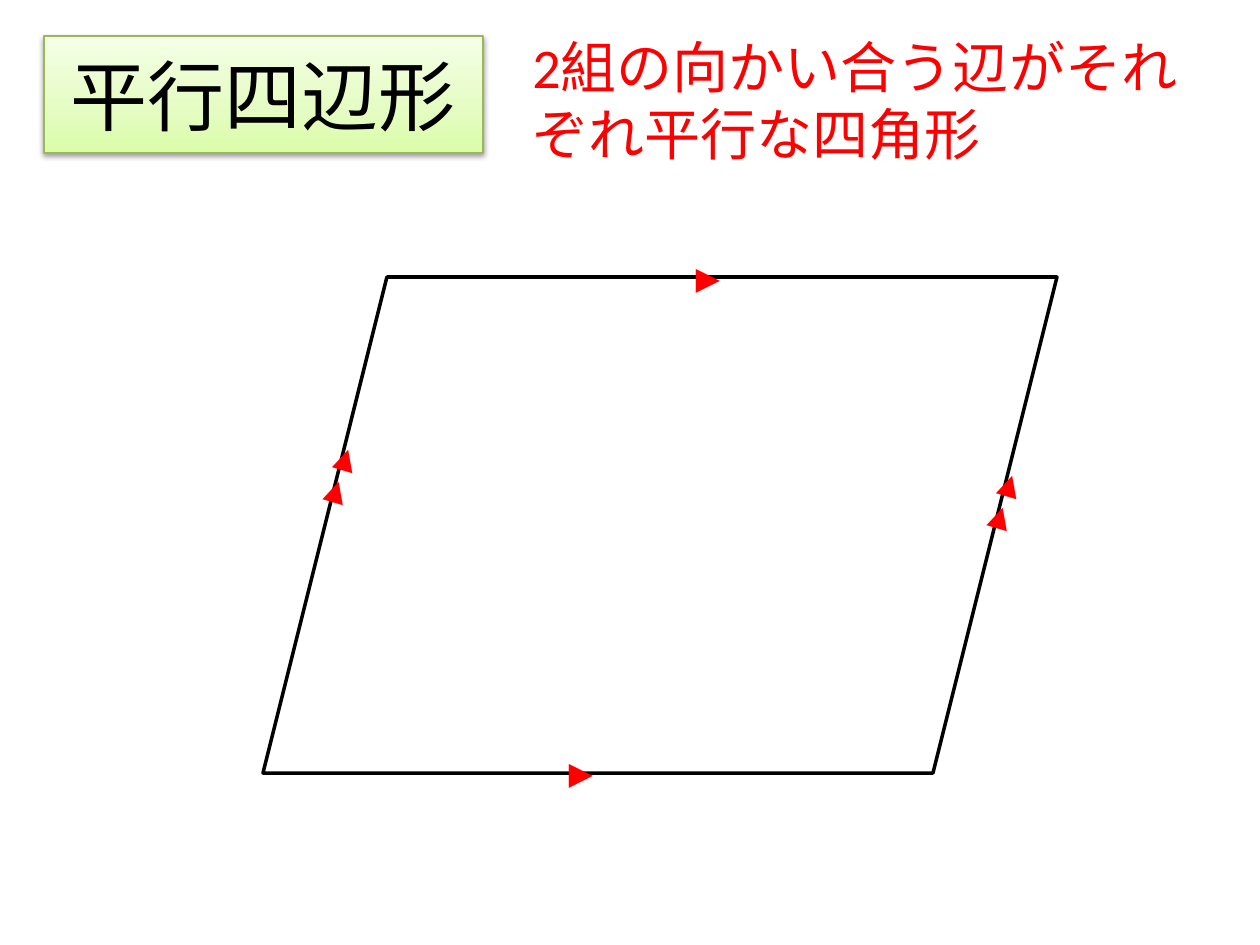
"""Builds a slide that defines the parallelogram and marks its parallel sides."""
from lxml import etree
from pptx import Presentation
from pptx.dml.color import RGBColor
from pptx.enum.shapes import MSO_SHAPE
from pptx.enum.text import MSO_ANCHOR, MSO_AUTO_SIZE, PP_ALIGN
from pptx.util import Pt

PARALLELOGRAM = MSO_SHAPE.PARALLELOGRAM
MIDDLE = MSO_ANCHOR.MIDDLE
NO_FIT, GROW = MSO_AUTO_SIZE.NONE, MSO_AUTO_SIZE.SHAPE_TO_FIT_TEXT
CENTER = PP_ALIGN.CENTER
PX = 914400 / 126
DRAWING = "http://schemas.openxmlformats.org/drawingml/2006/main"
RED, BLACK = "FF0000", "000000"


def color(hex_text):
    return RGBColor.from_string(hex_text)


def add_span(para, text, size, hex_text):
    span = para.add_run()
    span.text = text
    span.font.name = "Calibri"
    span.font.size = Pt(size)
    span.font.color.rgb = color(hex_text)


deck = Presentation()
deck.slide_width, deck.slide_height = round(1260 * PX), round(945 * PX)
page = deck.slides.add_slide(deck.slide_layouts[5])

title = page.shapes.title
title.left, title.top, title.width, title.height = [round(n * PX) for n in (44, 36, 439, 117)]
frame = title.text_frame
frame.auto_size = NO_FIT
frame.vertical_anchor = MIDDLE
frame.paragraphs[0].alignment = CENTER
add_span(frame.paragraphs[0], "平行四辺形", 44, BLACK)

stops = "".join(
    f'<a:gs pos="{percent * 1000}"><a:srgbClr val="{shade}"/></a:gs>'
    for percent, shade in ((0, "DAFDA7"), (35, "E4FCC2"), (100, "F5FFE7"))
)
gradient = (
    f'<a:gradFill xmlns:a="{DRAWING}" rotWithShape="1"><a:gsLst>{stops}</a:gsLst>'
    '<a:lin ang="16200000" scaled="0"/></a:gradFill>'
)
shadow = (
    f'<a:effectLst xmlns:a="{DRAWING}">'
    f'<a:outerShdw blurRad="{Pt(3.1)}" dist="{Pt(1.6)}" dir="5400000" rotWithShape="0">'
    f'<a:srgbClr val="{BLACK}"><a:alpha val="38000"/></a:srgbClr>'
    "</a:outerShdw></a:effectLst>"
)
title_look = title.element.spPr
title_look.append(etree.fromstring(gradient))
title.line.color.rgb = color("98B955")
title.line.width = Pt(0.75)
title_look.append(etree.fromstring(shadow))

definition = page.shapes.add_textbox(*[round(n * PX) for n in (520, 26, 684, 149)])
definition.text_frame.word_wrap = True
para = definition.text_frame.paragraphs[0]
para.space_before = Pt(6.4)
add_span(para, "2組の向かい合う辺がそれぞれ平行な四角形", 32, RED)

figure = page.shapes.add_shape(PARALLELOGRAM, *[round(n * PX) for n in (263, 277, 794, 496)])
figure.shadow.inherit = False
figure.fill.background()
figure.line.color.rgb = color(BLACK)
figure.line.width = Pt(2)

side_marks = [
    (675, 252, 57, 50, 270, 18, 1),
    (548, 747, 57, 50, 270, 18, 1),
    (309, 438, 54, 81, 196.4, 16, 2),
    (973, 464, 54, 81, 196.4, 16, 2),
]
for left, top, width, height, angle, size, count in side_marks:
    mark = page.shapes.add_textbox(*[round(n * PX) for n in (left, top, width, height)])
    mark.rotation = angle
    frame = mark.text_frame
    frame.word_wrap = False
    frame.auto_size = GROW
    for index in range(count):
        para = frame.add_paragraph() if index else frame.paragraphs[0]
        add_span(para, "▼", size, RED)

deck.save("out.pptx")
